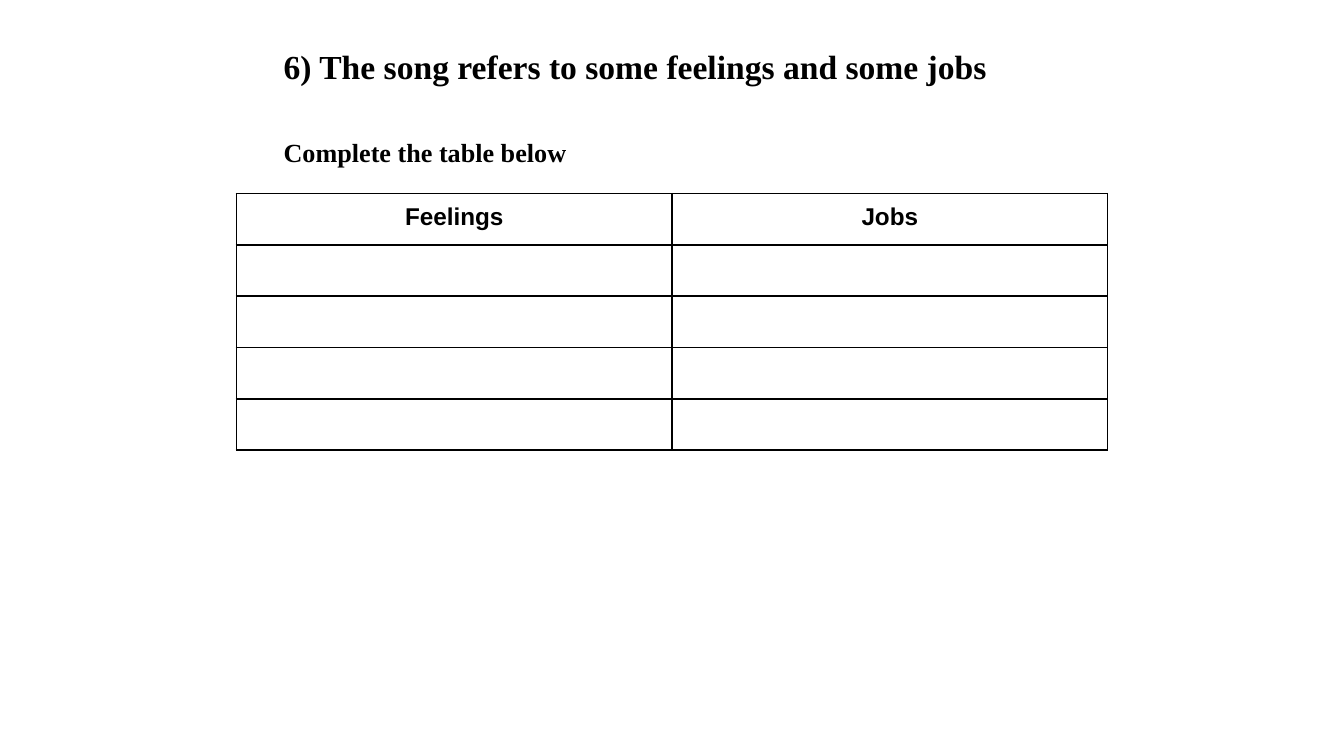
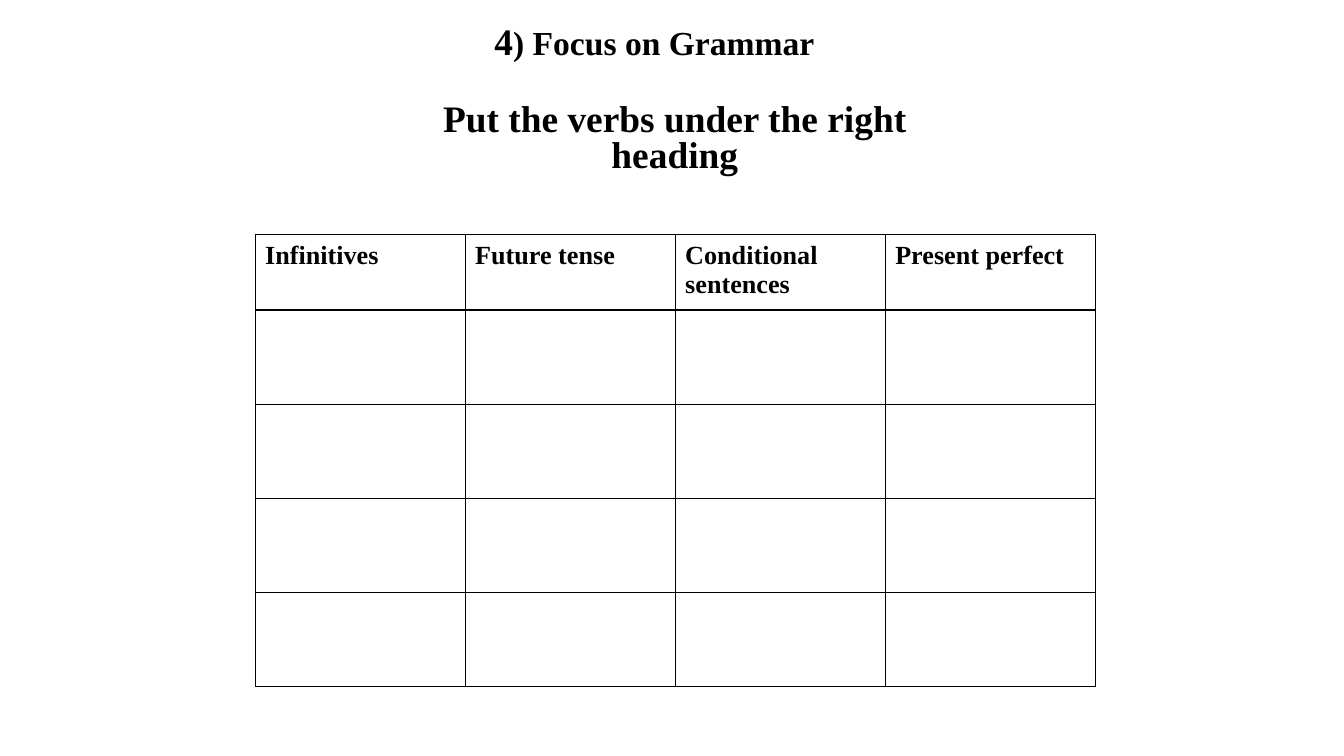
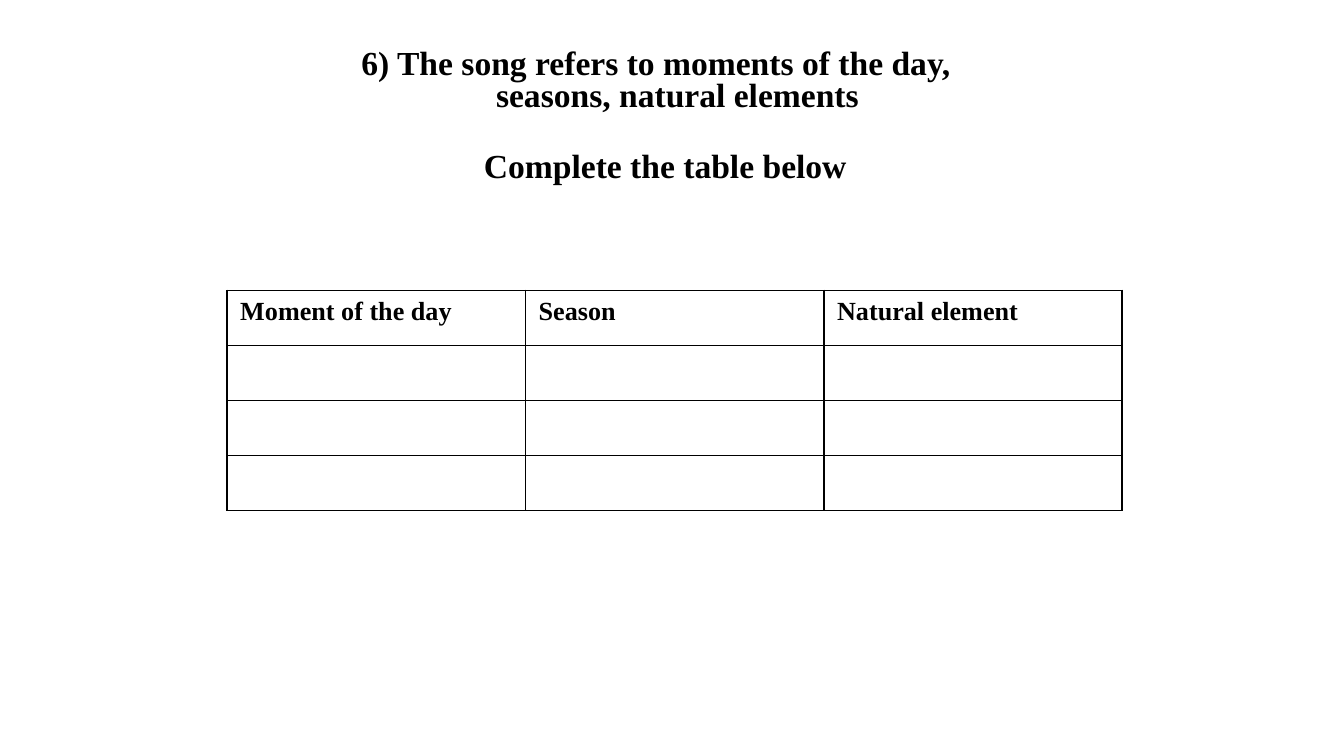
from pptx import Presentation
from pptx.dml.color import RGBColor
from pptx.enum.text import MSO_ANCHOR, MSO_AUTO_SIZE, PP_ALIGN
from pptx.oxml import parse_xml
from pptx.oxml.ns import nsdecls
from pptx.util import Cm, Pt

LEFT, CENTER = PP_ALIGN.LEFT, PP_ALIGN.CENTER
TOP = MSO_ANCHOR.TOP
NO_AUTOFIT = MSO_AUTO_SIZE.NONE

BLACK = "000000"
WHITE = "FFFFFF"
SERIF = "Times New Roman"
SANS = "Arial"
TITLE_ONLY = 5


def color(hex_code):
    return RGBColor.from_string(hex_code)


def set_font(font, size, name=SERIF):
    font.name = name
    font.size = Pt(size)
    font.bold = True
    font.color.rgb = color(BLACK)


def add_title_slide(presentation, left, top, width, height, inset_top=0.13):
    """Add a white slide and return the text frame of its placed title."""
    slide = presentation.slides.add_slide(presentation.slide_layouts[TITLE_ONLY])
    slide.background.fill.solid()
    slide.background.fill.fore_color.rgb = color(WHITE)
    title = slide.shapes.title
    title.left, title.top = Cm(left), Cm(top)
    title.width, title.height = Cm(width), Cm(height)
    frame = title.text_frame
    frame.word_wrap = True
    frame.auto_size = NO_AUTOFIT
    frame.vertical_anchor = TOP
    frame.margin_left = frame.margin_right = Cm(0.25)
    frame.margin_top = frame.margin_bottom = Cm(inset_top)
    return slide, frame


def write_line(paragraph, text, size, align=CENTER, spacing=0.8, before=0,
               margin=0, hanging=0):
    """Fill one title paragraph; margin and hanging are in centimetres."""
    paragraph.text = text
    properties = paragraph._p.get_or_add_pPr()
    properties.set("marL", str(Cm(margin)))
    properties.set("indent", str(-Cm(hanging)))
    paragraph.alignment = align
    paragraph.line_spacing = spacing
    paragraph.space_before = Pt(before)
    set_font(paragraph.font, size)


def set_borders(cell, width):
    properties = cell._tc.get_or_add_tcPr()
    for side in ("lnL", "lnR", "lnT", "lnB"):
        properties.append(parse_xml(
            f'<a:{side} {nsdecls("a")} w="{Pt(width)}"><a:solidFill>'
            f'<a:srgbClr val="{BLACK}"/></a:solidFill></a:{side}>'))


def add_answer_table(slide, left, top, headings, blank_rows, column_width,
                     heading_height, row_height, border=1, size=14, name=SERIF,
                     align=LEFT, inset=(0.25, 0.13)):
    """Add a ruled table with a heading row and blank rows to fill in."""
    columns, rows = len(headings), blank_rows + 1
    heights = [heading_height] + [row_height] * blank_rows
    table = slide.shapes.add_table(
        rows, columns, Cm(left), Cm(top),
        Cm(column_width * columns), Cm(sum(heights))).table
    table.first_row = table.horz_banding = False
    for column in table.columns:
        column.width = Cm(column_width)
    for row, height in zip(table.rows, heights):
        row.height = Cm(height)
    for index, cell in enumerate(table.iter_cells()):
        is_heading = index < columns
        set_borders(cell, border)
        cell.fill.background()
        cell.margin_left = cell.margin_right = Cm(inset[0])
        cell.margin_top = cell.margin_bottom = Cm(inset[1] if is_heading else 0)
        paragraph = cell.text_frame.paragraphs[0]
        if is_heading:
            paragraph.text = headings[index]
        paragraph.alignment = align
        set_font(paragraph.font, size, name)


def build_feelings_slide(presentation):
    slide, frame = add_title_slide(presentation, 5.11, 0.76, 15.19, 2.9, inset_top=0)
    write_line(frame.paragraphs[0], "6) The song refers to some feelings and some jobs",
               18, align=LEFT, spacing=1.15)
    write_line(frame.add_paragraph(), "Complete the table below",
               14, align=LEFT, spacing=1.15, before=24)
    add_answer_table(slide, 4.47, 3.66, ["Feelings", "Jobs"], 4, 8.23, 0.97, 0.97,
                     size=13, name=SANS, align=CENTER, inset=(0.18, 0.18))


def build_grammar_slide(presentation):
    slide, frame = add_title_slide(presentation, 5.92, 0.38, 12.7, 3.1)
    heading = frame.paragraphs[0]
    write_line(heading, "4", 20, margin=0.2)
    rest = heading.add_run()
    rest.text = ")\u00a0Focus on Grammar".replace("\u00a0", " ")
    rest.font.size = Pt(18)
    write_line(frame.add_paragraph(), "Put the verbs under the right heading",
               20, before=22, margin=0.97)
    headings = ["Infinitives", "Future tense", "Conditional sentences", "Present perfect"]
    add_answer_table(slide, 4.83, 4.43, headings, 4, 3.97, 1.43, 1.78,
                     border=0.75, inset=(0.18, 0.13))


def build_nature_slide(presentation):
    slide, frame = add_title_slide(presentation, 6.05, 0.81, 12.7, 3.61)
    write_line(frame.paragraphs[0],
               "6) The song refers to moments of the day, seasons, natural elements",
               18, margin=0.81, hanging=0.81)
    write_line(frame.add_paragraph(), "Complete the table below",
               18, before=20.5, margin=0.35)
    add_answer_table(slide, 4.29, 5.49, ["Moment of the day", "Season", "Natural element"],
                     3, 5.64, 1.04, 1.04)


def main():
    presentation = Presentation()
    presentation.slide_width, presentation.slide_height = Cm(25.4), Cm(14.29)
    build_feelings_slide(presentation)
    build_grammar_slide(presentation)
    build_nature_slide(presentation)
    presentation.save("out.pptx")


if __name__ == "__main__":
    main()
